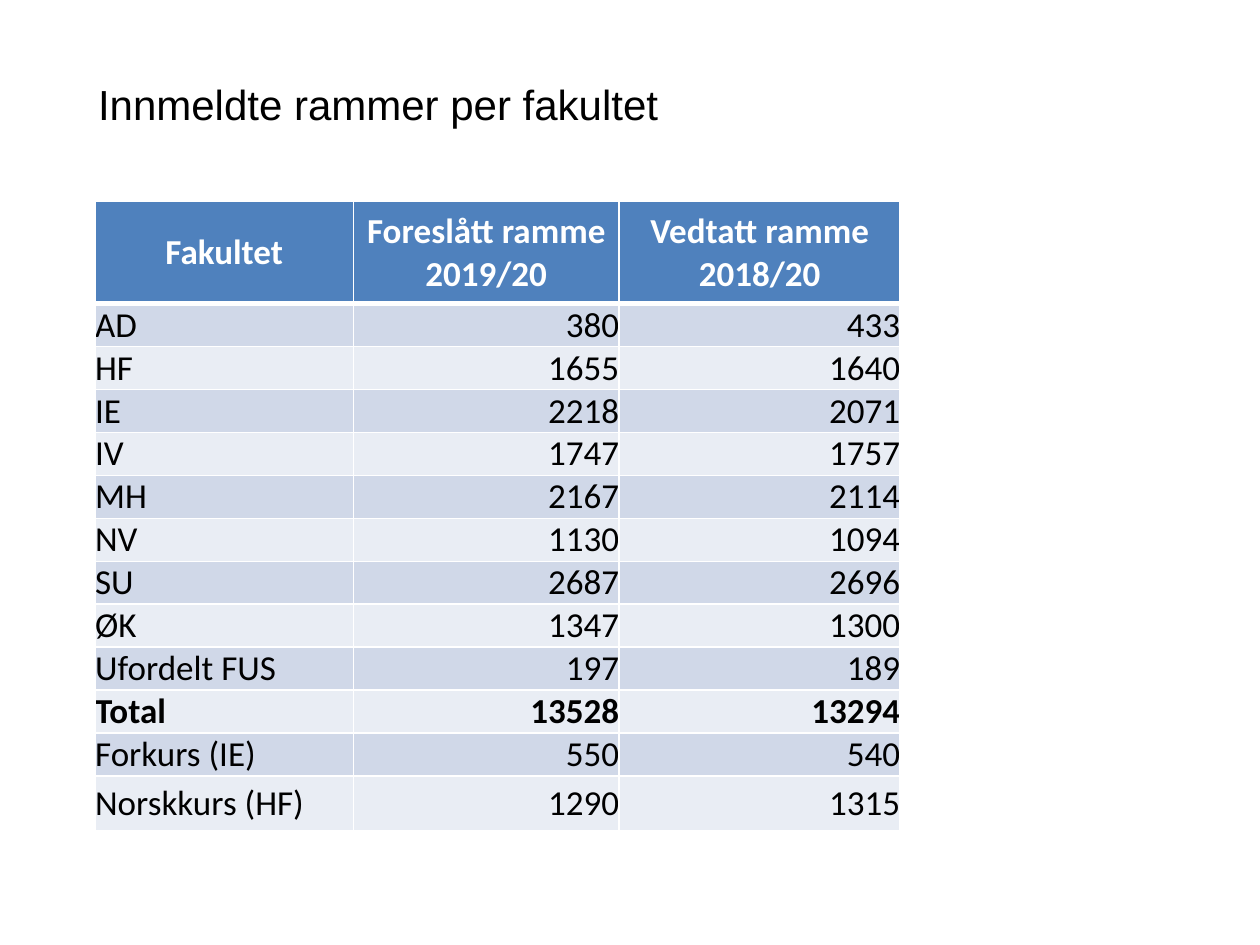
from lxml.etree import SubElement
from pptx import Presentation
from pptx.dml.color import RGBColor
from pptx.enum.text import MSO_ANCHOR, MSO_AUTO_SIZE, PP_ALIGN
from pptx.oxml.ns import qn
from pptx.util import Inches, Pt

COLORS = {
    "text": "000000",
    "white": "FFFFFF",
    "header": "4F81BD",
    "odd": "D0D8E8",
    "even": "E9EDF4",
}
HEADER = ("Fakultet", "Foreslått ramme 2019/20", "Vedtatt ramme 2018/20")
FACULTIES = [
    ("AD", 380, 433),
    ("HF", 1655, 1640),
    ("IE", 2218, 2071),
    ("IV", 1747, 1757),
    ("MH", 2167, 2114),
    ("NV", 1130, 1094),
    ("SU", 2687, 2696),
    ("ØK", 1347, 1300),
    ("Ufordelt FUS", 197, 189),
    ("Total", 13528, 13294),
    ("Forkurs (IE)", 550, 540),
    ("Norskkurs (HF)", 1290, 1315),
]
COL_WIDTHS = (2.05, 2.11, 2.23)
ROW_HEIGHTS = [0.81] + [0.28] * 11 + [0.44]


def write(tf, text, font="Calibri", size=20, color="text", bold=False, align=PP_ALIGN.LEFT):
    p = tf.paragraphs[0]
    p.alignment = align
    r = p.add_run()
    r.text = text
    r.font.name = font
    r.font.size = Pt(size)
    r.font.bold = bold
    r.font.color.rgb = RGBColor.from_string(COLORS[color])


def set_borders(cell, bottom=1):
    """White cell borders of 1 pt; they must come before the fill in the XML."""
    tc_pr = cell._tc.get_or_add_tcPr()
    for side, width in (("L", 1), ("R", 1), ("T", 1), ("B", bottom)):
        ln = SubElement(tc_pr, qn(f"a:ln{side}"), w=str(Pt(width)))
        fill = SubElement(ln, qn("a:solidFill"))
        SubElement(fill, qn("a:srgbClr"), val=COLORS["white"])


class Deck:
    def __init__(self, width=10, height=7.5):
        self.prs = Presentation()
        self.prs.slide_width = Inches(width)
        self.prs.slide_height = Inches(height)
        self.s = self.prs.slides.add_slide(self.prs.slide_layouts[6])

    def place(self, x, y, w, h):
        """Turn shares of the slide's size into lengths."""
        W, H = self.prs.slide_width, self.prs.slide_height
        return int(x * W), int(y * H), int(w * W), int(h * H)

    def title(self, text, *box):
        tf = self.s.shapes.add_textbox(*self.place(*box)).text_frame
        tf.word_wrap = True
        tf.auto_size = MSO_AUTO_SIZE.SHAPE_TO_FIT_TEXT
        write(tf, text, font="Arial", size=24)

    def cell(self, cell, text, fill, bottom=1, **style):
        cell.margin_left = cell.margin_right = cell.margin_top = cell.margin_bottom = 0
        cell.vertical_anchor = MSO_ANCHOR.MIDDLE
        set_borders(cell, bottom)
        cell.fill.solid()
        cell.fill.fore_color.rgb = RGBColor.from_string(COLORS[fill])
        write(cell.text_frame, text, **style)

    def table(self, header, rows, widths, heights, *box):
        table = self.s.shapes.add_table(
            len(heights), len(widths), *self.place(*box)).table
        for col, width in zip(table.columns, widths):
            col.width = Inches(width)
        for row, height in zip(table.rows, heights):
            row.height = Inches(height)
        for j, text in enumerate(header):
            self.cell(table.cell(0, j), text, "header", bottom=3,
                      color="white", bold=True, align=PP_ALIGN.CENTER)
        for i, row in enumerate(rows, 1):
            for j, value in enumerate(row):
                self.cell(table.cell(i, j), str(value), "odd" if i % 2 else "even",
                          bold=row[0] == "Total",
                          align=PP_ALIGN.RIGHT if j else PP_ALIGN.LEFT)


def main():
    deck = Deck()
    deck.table(HEADER, FACULTIES, COL_WIDTHS, ROW_HEIGHTS, 0.0755, 0.2135, 0.64, 0.66)
    deck.title("Innmeldte rammer per fakultet", 0.068, 0.077, 0.68, 0.067)
    deck.prs.save("out.pptx")


if __name__ == "__main__":
    main()
